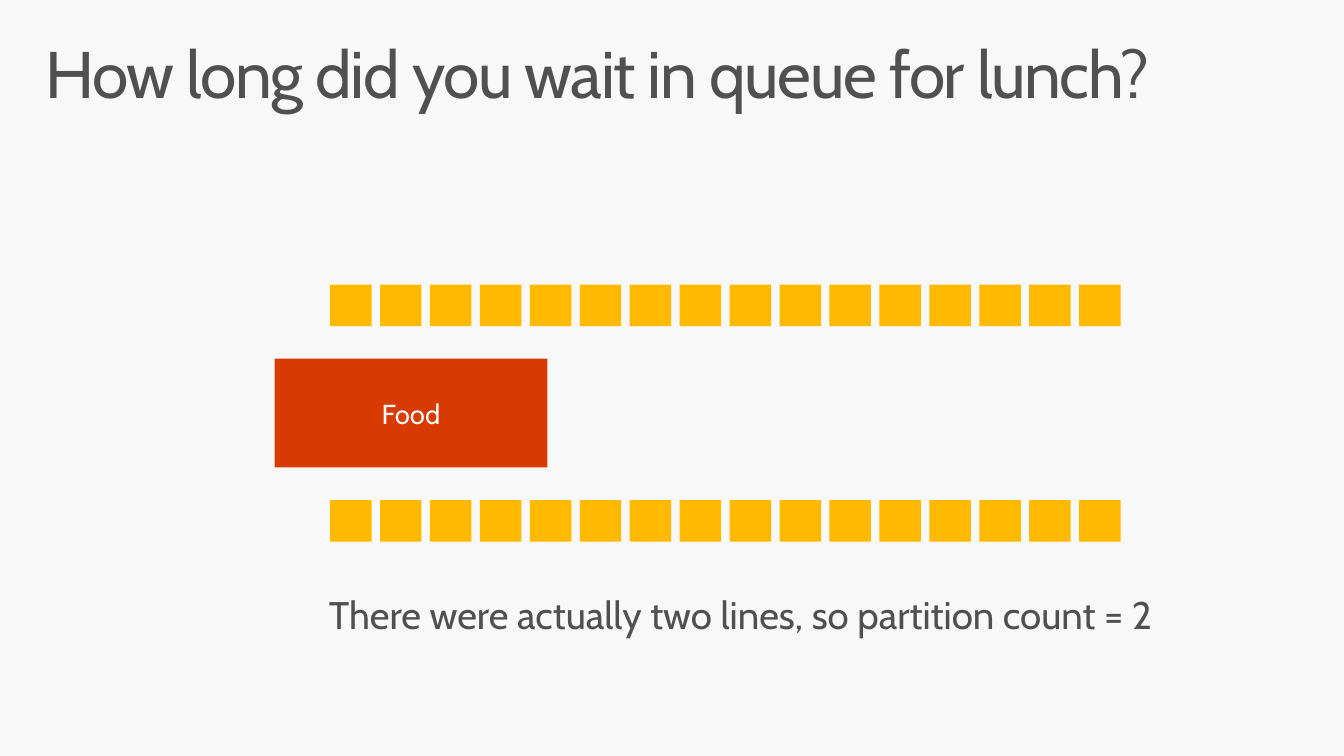
"""Build the lunch queue slide: two lines of people around one food counter."""
from pptx import Presentation
from pptx.dml.color import RGBColor
from pptx.enum import shapes, text
from pptx.util import Pt

PX = 9144
GREY, PALE, GOLD, RED = "505050", "F8F8F8", "FFB900", "D83B01"
COUNT, SIDE, SPAN = 16, 42, 758


def box(left, top, width, height, fill=None):
    """Add a filled rectangle, or a text box when there is no fill."""
    area = [round(n * PX) for n in (left, top, width, height)]
    if fill is None:
        return slide.shapes.add_textbox(*area)
    rect = slide.shapes.add_shape(shapes.MSO_SHAPE.RECTANGLE, *area)
    rect.shadow.inherit = False
    rect.fill.solid()
    rect.fill.fore_color.rgb = RGBColor.from_string(fill)
    rect.line.fill.background()
    return rect


def write(shape, words, size, color, pad):
    """Set one styled line of text and return its paragraph."""
    frame = shape.text_frame
    frame.word_wrap = True
    frame.margin_left = frame.margin_right = pad[0] * PX
    frame.margin_top = frame.margin_bottom = pad[1] * PX
    frame.text = words
    para = frame.paragraphs[0]
    font = para.runs[0].font
    font.name, font.size = "Cabin", Pt(size)
    font.color.rgb = RGBColor.from_string(color)
    return para


prs = Presentation()
prs.slide_width, prs.slide_height = 1360 * PX, 765 * PX
slide = prs.slides.add_slide(prs.slide_layouts[6])
slide.background.fill.solid()
slide.background.fill.fore_color.rgb = RGBColor.from_string(PALE)

title = write(box(30, 32, 1300, 100), "How long did you wait in queue for lunch?", 48, GREY, (16, 10))
title.line_spacing = 0.9
title.runs[0]._r.get_or_add_rPr().set("spc", "-100")

for top in (288, 506):
    for i in range(COUNT):
        box(334 + i * SPAN / (COUNT - 1), top, SIDE, SIDE, GOLD)

food = box(278, 363, 276, 110, RED)
food.text_frame.vertical_anchor = text.MSO_ANCHOR.MIDDLE
write(food, "Food", 20, PALE, (0, 5)).alignment = text.PP_ALIGN.CENTER

note = box(323, 593, 914, 57)
write(note, "There were actually two lines, so partition count = 2", 28, GREY, (10, 5))

prs.save("out.pptx")
